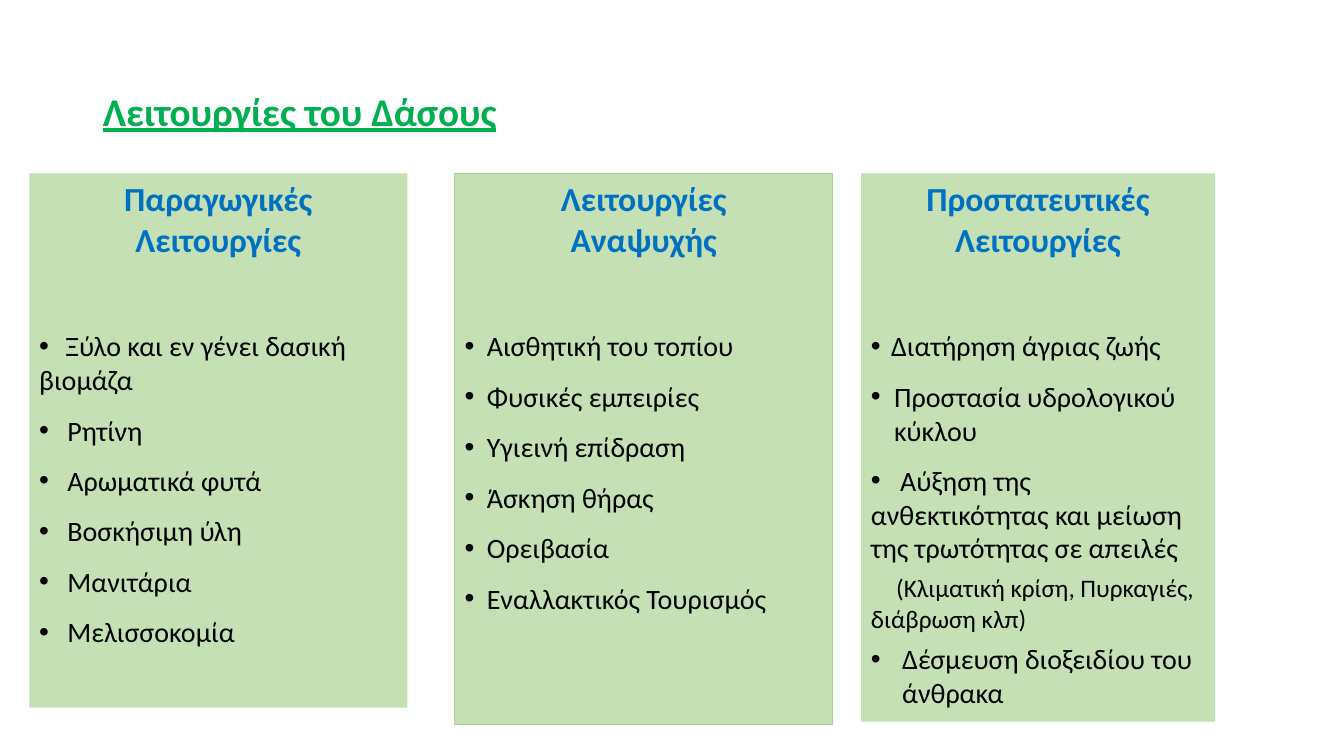
import pptx
import pptx.util
import pptx.dml.color
import pptx.enum.shapes
import pptx.enum.text
import pptx.oxml.ns
import lxml.etree

Inches, Pt = pptx.util.Inches, pptx.util.Pt
RGBColor = pptx.dml.color.RGBColor
ALIGN, ANCHOR = pptx.enum.text.PP_ALIGN, pptx.enum.text.MSO_ANCHOR

TITLE_GREEN = RGBColor(0x00, 0xB0, 0x50)
PANEL_GREEN = RGBColor(0xC5, 0xE0, 0xB4)
EDGE_GREEN = RGBColor(0xA9, 0xD1, 0x8E)
HEAD_BLUE = RGBColor(0x00, 0x70, 0xC0)
BLACK = RGBColor(0, 0, 0)

FONT = "Calibri"
PANEL_TOP = 1.72
HEAD_GAP = 50
HANG, FLUSH, NOTE = "hang", "flush", "note"

PRODUCTIVE = [
    ("Ξύλο και εν γένει δασική βιομάζα", FLUSH, 0.26),
    ("Ρητίνη", HANG, 0.28),
    ("Αρωματικά φυτά", HANG, 0.28),
    ("Βοσκήσιμη ύλη", HANG, 0.28),
    ("Μανιτάρια", HANG, 0.28),
    ("Μελισσοκομία", HANG, 0.28),
]
RECREATION = [
    (text, HANG, 0.22)
    for text in (
        "Αισθητική του τοπίου",
        "Φυσικές εμπειρίες",
        "Υγιεινή επίδραση",
        "Άσκηση θήρας",
        "Ορειβασία",
        "Εναλλακτικός Τουρισμός",
    )
]
PROTECTIVE = [
    ("Διατήρηση άγριας ζωής", HANG, 0.2),
    ("Προστασία υδρολογικού κύκλου", HANG, 0.23),
    ("Αύξηση της ανθεκτικότητας και μείωση της τρωτότητας σε απειλές", FLUSH, 0.29),
    ("(Κλιματική κρίση, Πυρκαγιές, διάβρωση κλπ)", NOTE, 0.25),
    ("Δέσμευση διοξειδίου του άνθρακα", HANG, 0.31),
]
PANELS = [
    (0.29, 3.75, 5.3, None, ["Παραγωγικές Λειτουργίες"], PRODUCTIVE),
    (4.51, 3.75, 5.47, EDGE_GREEN, ["Λειτουργίες", "Αναψυχής"], RECREATION),
    (8.54, 3.51, 5.44, None, ["Προστατευτικές", "Λειτουργίες"], PROTECTIVE),
]


def add_run(p, text, size, color, bold=False):
    """Add one formatted run to a paragraph."""
    r = p.add_run()
    r.text = text
    r.font.name, r.font.size, r.font.bold = FONT, Pt(size), bold
    r.font.color.rgb = color
    return r


def indent(p, kind, offset):
    """Set the margins, bullet and tab stop of a list paragraph."""
    qn, sub = pptx.oxml.ns.qn, lxml.etree.SubElement
    width = Inches(offset)
    pPr = p._p.get_or_add_pPr()
    margin, first = {HANG: (width, -width), FLUSH: (0, 0), NOTE: (0, width)}[kind]
    pPr.set("marL", str(margin))
    pPr.set("indent", str(first))
    if kind != NOTE:
        sub(pPr, qn("a:buFont")).set("typeface", "Arial")
        sub(pPr, qn("a:buChar")).set("char", "•")
    if kind == FLUSH:
        tab = sub(sub(pPr, qn("a:tabLst")), qn("a:tab"))
        tab.set("pos", str(width))
        tab.set("algn", "l")


def add_title(s, left, top, width, height):
    """Place and format the slide title."""
    sp = s.shapes.title
    sp.left, sp.top, sp.width, sp.height = map(Inches, (left, top, width, height))
    tf = sp.text_frame
    tf.vertical_anchor = ANCHOR.MIDDLE
    p = tf.paragraphs[0]
    p.alignment, p.line_spacing = ALIGN.LEFT, 0.9
    add_run(p, "Λειτουργίες του Δάσους", 28, TITLE_GREEN, True).font.underline = True


def add_panel(s, left, top, width, height, edge, heads, items):
    """Draw a panel with a centred heading above its list."""
    sp = s.shapes.add_shape(
        pptx.enum.shapes.MSO_SHAPE.RECTANGLE, *map(Inches, (left, top, width, height)))
    sp.shadow.inherit = False
    sp.fill.solid()
    sp.fill.fore_color.rgb = PANEL_GREEN
    if edge is None:
        sp.line.fill.background()
    else:
        sp.line.color.rgb, sp.line.width = edge, Pt(0.75)
    tf = sp.text_frame
    tf.word_wrap, tf.vertical_anchor = True, ANCHOR.TOP
    for i, head in enumerate(heads):
        p = tf.add_paragraph() if i else tf.paragraphs[0]
        p.alignment = ALIGN.CENTER
        add_run(p, head, 24, HEAD_BLUE, True)
    before = HEAD_GAP
    for text, kind, offset in items:
        p = tf.add_paragraph()
        p.alignment = ALIGN.LEFT
        p.space_before = Pt(0 if kind == NOTE else before)
        p.space_after = Pt(6)
        indent(p, kind, offset)
        add_run(p, "\t" + text if kind == FLUSH else text, 18 if kind == NOTE else 20, BLACK)
        before = 0 if kind == NOTE else 6


def main():
    """Build and save the slide."""
    prs = pptx.Presentation()
    prs.slide_width, prs.slide_height = Inches(13.33), Inches(7.5)
    s = prs.slides.add_slide(prs.slide_layouts[5])
    add_title(s, 0.92, 0.4, 11.5, 1.45)
    for left, width, height, edge, heads, items in PANELS:
        add_panel(s, left, PANEL_TOP, width, height, edge, heads, items)
    prs.save("out.pptx")


if __name__ == "__main__":
    main()
